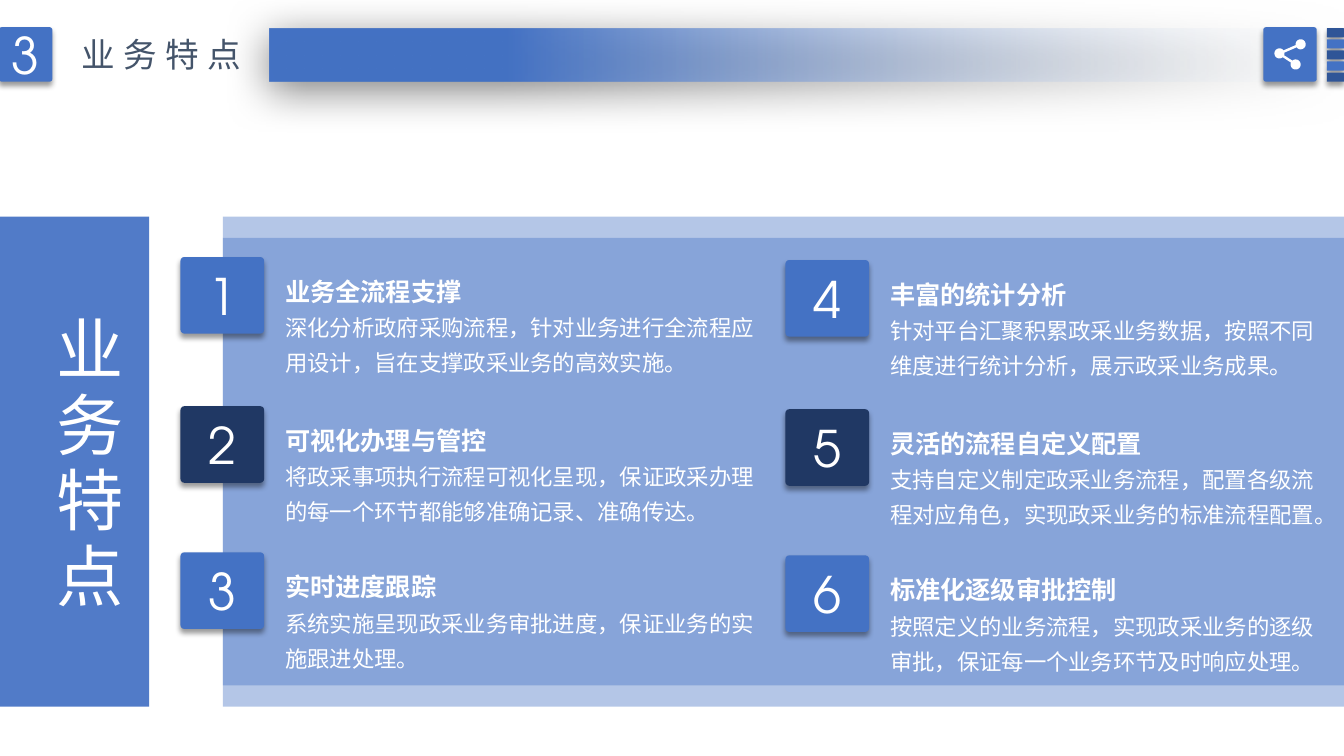
from dataclasses import dataclass
from math import cos, radians, sin

from lxml.etree import SubElement
from pptx import Presentation
from pptx.dml.color import RGBColor
from pptx.enum.shapes import MSO_SHAPE
from pptx.enum.text import MSO_ANCHOR, MSO_AUTO_SIZE, PP_ALIGN
from pptx.oxml.ns import qn
from pptx.util import Inches, Pt

COLORS = {
    "blue": "4472C4", "mid": "2F5597", "navy": "203864", "slate": "44546A",
    "white": "FFFFFF", "pale": "F7FAFD", "black": "000000",
}
HAN = "Noto Sans CJK SC"
DIGITS = "TeX Gyre Adventor"


@dataclass
class Box:
    left: float
    top: float
    width: float
    height: float

    def emu(self) -> tuple:
        return tuple(Inches(v) for v in (self.left, self.top, self.width, self.height))


@dataclass
class Shadow:
    alpha: int
    blur: float
    distance: float
    angle: int


@dataclass
class Feature:
    title: str
    detail: str
    width: float


SOFT = Shadow(40, 4, 3, 90)
WIDE = Shadow(50, 31, 6, 97)

FEATURES = [
    Feature("业务全流程支撑", "深化分析政府采购流程，针对业务进行全流程应用设计，旨在支撑政采业务的高效实施。", 4.87),
    Feature("可视化办理与管控", "将政采事项执行流程可视化呈现，保证政采办理的每一个环节都能够准确记录、准确传达。", 4.87),
    Feature("实时进度跟踪", "系统实施呈现政采业务审批进度，保证业务的实施跟进处理。", 4.9),
    Feature("丰富的统计分析", "针对平台汇聚积累政采业务数据，按照不同维度进行统计分析，展示政采业务成果。", 4.43),
    Feature("灵活的流程自定义配置", "支持自定义制定政采业务流程，配置各级流程对应角色，实现政采业务的标准流程配置。", 4.6),
    Feature("标准化逐级审批控制", "按照定义的业务流程，实现政采业务的逐级审批，保证每一个业务环节及时响应处理。", 4.6),
]
COLUMNS = [(1.79, 0), (7.79, 0.03)]  # badge left, downward shift
ROWS = [(2.55, "blue"), (4.03, "navy"), (5.48, "blue")]


def rgb(name: str) -> RGBColor:
    return RGBColor.from_string(COLORS[name])


def set_alpha(color_element, percent: int) -> None:
    SubElement(color_element, qn("a:alpha"), val=str(percent * 1000))


def cast_shadow(shape, shadow: Shadow) -> None:
    effects = shape._element.spPr.find(qn("a:effectLst"))
    outer = SubElement(effects, qn("a:outerShdw"), blurRad=str(Pt(shadow.blur)),
                       dist=str(Pt(shadow.distance)), dir=str(shadow.angle * 60000),
                       algn="ctr", rotWithShape="0")
    set_alpha(SubElement(outer, qn("a:srgbClr"), val=COLORS["black"]), shadow.alpha)


def add_block(slide, box: Box, color: str = "blue", *, alpha: int = 100,
              corner: float | None = None, shadow: Shadow | None = None):
    kind = MSO_SHAPE.RECTANGLE if corner is None else MSO_SHAPE.ROUNDED_RECTANGLE
    block = slide.shapes.add_shape(kind, *box.emu())
    if corner is not None:
        block.adjustments[0] = corner
    block.fill.solid()
    block.fill.fore_color.rgb = rgb(color)
    if alpha < 100:
        set_alpha(next(block._element.spPr.iter(qn("a:srgbClr"))), alpha)
    block.line.fill.background()
    block.shadow.inherit = False
    if shadow:
        cast_shadow(block, shadow)
    return block


def write(paragraph, text: str, *, size: float, font: str = HAN, color: str = "white",
          bold: bool = False, spacing: float = 0, align=None, line: float | None = None) -> None:
    if align is not None:
        paragraph.alignment = align
    if line is not None:
        paragraph.line_spacing = line
    run = paragraph.add_run()
    run.text = text
    run.font.size = Pt(size)
    run.font.bold = bold
    run.font.color.rgb = rgb(color)
    run.font.name = font
    properties = run._r.get_or_add_rPr()
    SubElement(properties, qn("a:ea"), typeface=font)
    if spacing:
        properties.set("spc", str(int(spacing * 100)))


def add_text_frame(slide, box: Box, wrap: bool):
    frame = slide.shapes.add_textbox(*box.emu()).text_frame
    frame.word_wrap = wrap
    frame.auto_size = MSO_AUTO_SIZE.SHAPE_TO_FIT_TEXT
    return frame


def add_badge(slide, box: Box, number: int, color: str = "blue") -> None:
    frame = add_block(slide, box, color, corner=0.05, shadow=SOFT).text_frame
    frame.vertical_anchor = MSO_ANCHOR.MIDDLE
    write(frame.paragraphs[0], str(number), size=36, font=DIGITS, align=PP_ALIGN.CENTER)


def add_feature(slide, index: int, feature: Feature) -> None:
    column, row = divmod(index, len(ROWS))
    left, shift = COLUMNS[column]
    top, color = ROWS[row]
    add_badge(slide, Box(left, top + shift, 0.83, 0.76), index + 1, color)
    frame = add_text_frame(slide, Box(left + 0.94, top + shift + 0.05, feature.width, 1.19), True)
    write(frame.paragraphs[0], feature.title, size=18, bold=True, line=1.3)
    write(frame.add_paragraph(), feature.detail, size=16, line=1.3)


def arc(center: tuple, start: int, end: int) -> list:
    """Points of a share-icon dot, clockwise from start to end degrees."""
    radius, steps = 0.05, 24
    angles = [radians(start + (end - start) * i / steps) for i in range(steps + 1)]
    return [(Inches(center[0] + radius * cos(a)), Inches(center[1] + radius * sin(a)))
            for a in angles]


def add_share_icon(slide) -> None:
    hub, upper, lower = (12.69, 0.53), (12.9, 0.44), (12.85, 0.64)
    outline = (arc(upper, 171, 503) + arc(hub, -9, 22)
               + arc(lower, 230, 562) + arc(hub, 50, 323))
    builder = slide.shapes.build_freeform(*outline[0])
    builder.add_line_segments(outline[1:], close=True)
    icon = builder.convert_to_shape()
    icon.fill.solid()
    icon.fill.fore_color.rgb = rgb("white")
    icon.line.fill.background()
    icon.shadow.inherit = False


def add_header(slide) -> None:
    band = add_block(slide, Box(2.67, 0.28, 10.67, 0.53), shadow=WIDE)
    band.fill.gradient()
    band.fill.gradient_angle = 180
    for stop, (position, color) in zip(band.fill.gradient_stops, [(0, "pale"), (0.78, "blue")]):
        stop.position = position
        stop.color.rgb = rgb(color)
    set_alpha(next(band._element.spPr.iter(qn("a:srgbClr"))), 0)

    add_badge(slide, Box(-0.01, 0.27, 0.53, 0.54), 3)
    heading = add_text_frame(slide, Box(0.71, 0.29, 1.88, 0.5), False)
    write(heading.paragraphs[0], "业务特点", size=24, color="slate", spacing=6)

    # Menu bars and share button
    for i in range(5):
        add_block(slide, Box(13.16, 0.28 + 0.11 * i, 0.17, 0.09),
                  "blue" if i % 2 else "mid", corner=0.05, shadow=SOFT)
    add_block(slide, Box(12.53, 0.27, 0.53, 0.54), corner=0.05, shadow=SOFT)
    add_share_icon(slide)


def main() -> None:
    deck = Presentation()
    deck.slide_width, deck.slide_height = Inches(13.33), Inches(7.5)
    slide = deck.slides.add_slide(deck.slide_layouts[6])

    # Overlapping translucent panels
    for top in (2.36, 2.15):
        add_block(slide, Box(2.21, top, 11.12, 4.65), alpha=40)

    # Side title
    add_block(slide, Box(-0.01, 2.15, 1.49, 4.86), alpha=93)
    side_title = add_text_frame(slide, Box(0.31, 3.03, 1.01, 3.13), False)
    side_title._txBody.bodyPr.set("vert", "eaVert")
    write(side_title.paragraphs[0], "业务特点", size=48, spacing=6)

    add_header(slide)

    # Numbered features
    for index, feature in enumerate(FEATURES):
        add_feature(slide, index, feature)

    deck.save("out.pptx")


if __name__ == "__main__":
    main()
